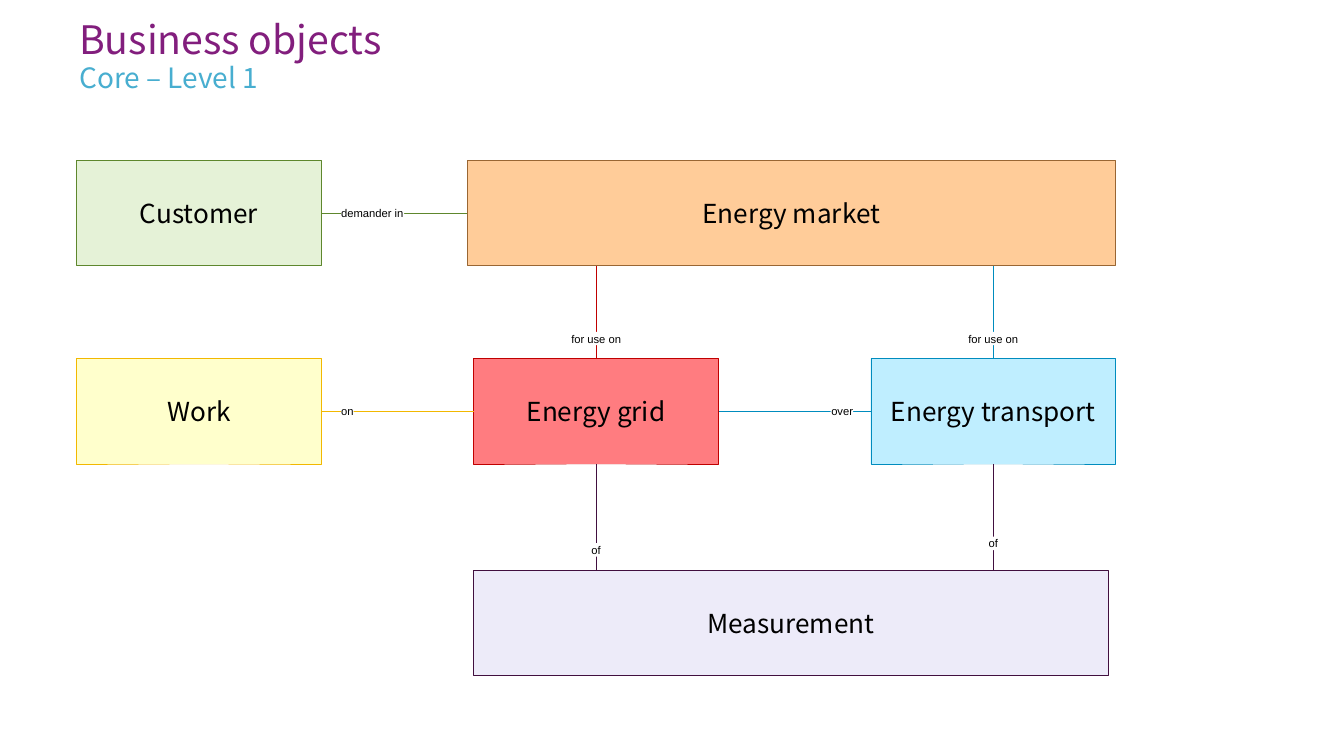
import dataclasses
import pptx
import pptx.dml.color
import pptx.enum.shapes
import pptx.enum.text
import pptx.oxml.ns
import pptx.util

Pt = pptx.util.Pt
Align = pptx.enum.text.PP_ALIGN
Anchor = pptx.enum.text.MSO_ANCHOR
Fit = pptx.enum.text.MSO_AUTO_SIZE


@dataclasses.dataclass(frozen=True)
class Theme:
    face: str = "Noto Sans CJK TC"
    small: str = "Arial"
    head: float = 21
    sub: float = 15
    body: float = 14
    note: float = 6
    edge: float = 0.25
    black: str = "000000"
    white: str = "FFFFFF"
    plum: str = "821E7D"
    sky: str = "48AED0"
    green: tuple = ("E5F2D7", "5E872D")
    red: tuple = ("FF7C80", "C00000")
    blue: tuple = ("BFEEFF", "008CBE")
    purple: tuple = ("EDEBF9", "410F3F")
    yellow: tuple = ("FFFFCC", "F2B800")
    orange: tuple = ("FFCC99", "996633")


class Painter:
    def __init__(self, slide, theme):
        self.slide = slide
        self.theme = theme

    def color(self, value):
        return pptx.dml.color.RGBColor.from_string(value)

    def letter(self, shape, text, face, size, color, align, anchor, pad=(0, 0), wrap=True):
        frame = shape.text_frame
        frame.word_wrap = wrap
        frame.vertical_anchor = anchor
        frame.margin_left = frame.margin_right = Pt(pad[0])
        frame.margin_top = frame.margin_bottom = Pt(pad[1])
        para = frame.paragraphs[0]
        para.alignment = align
        run = para.add_run()
        run.text = text
        run.font.name = face
        run.font.size = Pt(size)
        run.font.color.rgb = self.color(color)
        return para

    def title(self, text, left, top, width, height, size, color, space):
        box = self.slide.shapes.add_textbox(Pt(left), Pt(top), Pt(width), Pt(height))
        para = self.letter(box, text, self.theme.face, size, color, Align.LEFT, Anchor.TOP)
        para.line_spacing = space

    def block(self, left, top, width, height, fill):
        shape = self.slide.shapes.add_shape(
            pptx.enum.shapes.MSO_SHAPE.RECTANGLE, Pt(left), Pt(top), Pt(width), Pt(height))
        shape.shadow.inherit = False
        shape.fill.solid()
        shape.fill.fore_color.rgb = self.color(fill)
        return shape

    def card(self, text, left, top, width, height, paint):
        fill, edge = paint
        shape = self.block(left, top, width, height, fill)
        shape.line.color.rgb = self.color(edge)
        shape.line.width = Pt(self.theme.edge)
        self.letter(shape, text, self.theme.face, self.theme.body, self.theme.black,
                    Align.CENTER, Anchor.MIDDLE, (7.2, 3.6))

    def label(self, text, left, top, width, height, align=Align.CENTER):
        shape = self.block(left, top, width, height, self.theme.white)
        shape.line.fill.background()
        self.letter(shape, text, self.theme.small, self.theme.note, self.theme.black,
                    align, Anchor.BOTTOM, wrap=align == Align.CENTER)
        shape.text_frame.auto_size = Fit.SHAPE_TO_FIT_TEXT

    def link(self, start, end, color):
        line = self.slide.shapes.add_connector(
            pptx.enum.shapes.MSO_CONNECTOR.STRAIGHT, *(Pt(v) for v in (*start, *end)))
        line.line.color.rgb = self.color(color)
        line.line.width = Pt(self.theme.edge)
        props = line._element.spPr
        props.append(props.makeelement(pptx.oxml.ns.qn("a:effectLst"), {}))


def main():
    deck = pptx.Presentation()
    deck.slide_width, deck.slide_height = Pt(720), Pt(405)
    theme = Theme()
    pen = Painter(deck.slides.add_slide(deck.slide_layouts[6]), theme)

    wide, high = 131.25, 56.5
    cols = [41 + 212.75 * i for i in range(3)]
    rows = [85.75, 192, 305.5]
    mids = [x + wide / 2 for x in cols]
    lines = [y + high / 2 for y in rows]
    ends = [x + wide for x in cols]
    feet = [y + high for y in rows]
    market = 250.25

    pen.title("Business objects", 42.5, 12.25, 695, 28, theme.head, theme.plum, Pt(theme.head))
    pen.title("Core – Level 1", 42.5, 28.75, 559, 16, theme.sub, theme.sky, 1.2)

    for text, left, row, width, paint in (
        ("Customer", cols[0], 0, wide, theme.green),
        ("Energy grid", cols[1], 1, wide, theme.red),
        ("Energy transport", cols[2], 1, wide, theme.blue),
        ("Measurement", cols[1], 2, 340, theme.purple),
        ("Work", cols[0], 1, wide, theme.yellow),
        ("Energy market", market, 0, ends[2] - market, theme.orange),
    ):
        pen.card(text, left, rows[row], width, high, paint)

    pen.link((market, lines[0]), (ends[0], lines[0]), theme.green[1])
    for x, paint in zip(mids[1:], (theme.red, theme.blue)):
        pen.link((x, rows[1]), (x, feet[0]), paint[1])
        pen.link((x, feet[1]), (x, rows[2]), theme.purple[1])
    pen.link((cols[2], lines[1]), (ends[1], lines[1]), theme.blue[1])
    pen.link((ends[0], lines[1]), (cols[1], lines[1]), theme.yellow[1])

    tall = 7.25
    for text, left, row, width, align in (
        ("on", 182.75, 1, 6.75, Align.LEFT),
        ("over", 445, 1, 12, Align.RIGHT),
        ("demander in", 182.75, 0, 33.75, Align.LEFT),
    ):
        pen.label(text, left, lines[row] - tall / 2, width, tall, align)
    for text, col, top in (
        ("for use on", 2, 177.75),
        ("for use on", 1, 177.75),
        ("of", 1, 291),
        ("of", 2, 287.5),
    ):
        pen.label(text, cols[col], top, wide, tall)

    deck.save("out.pptx")


if __name__ == "__main__":
    main()
